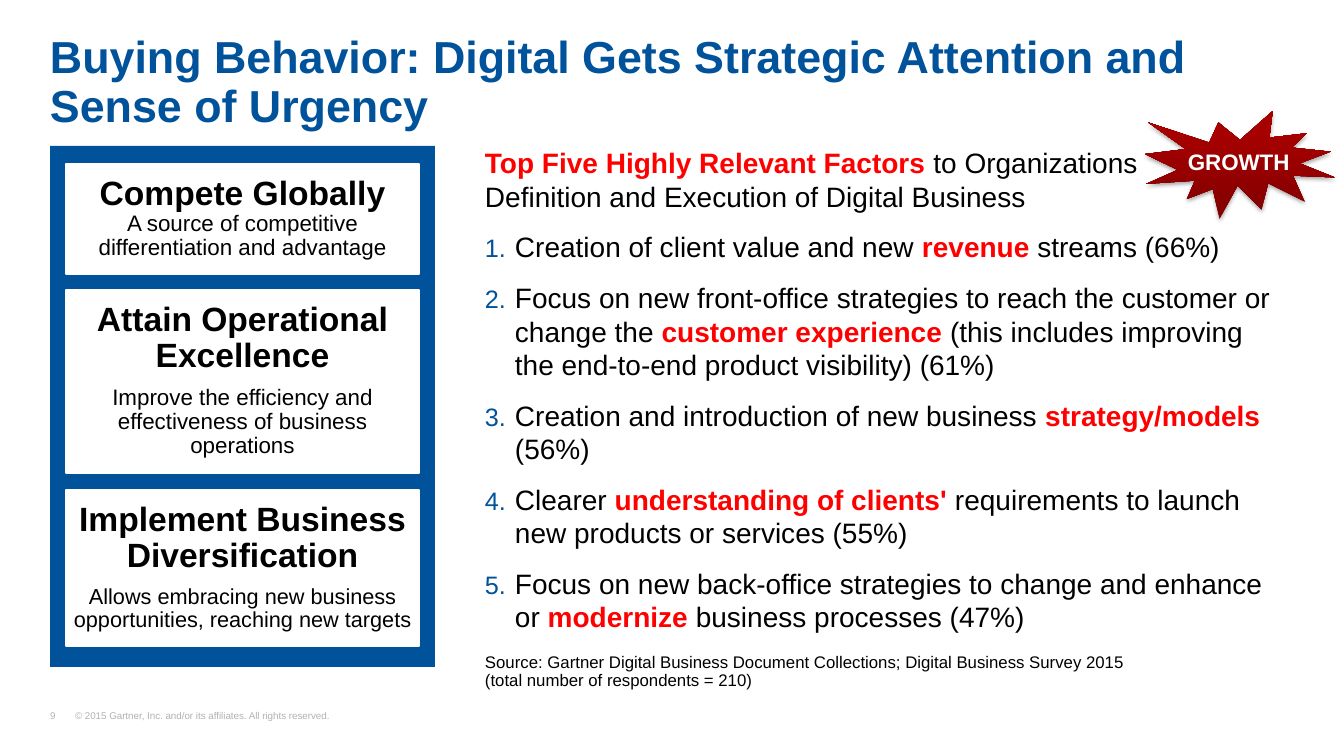
import pptx
import pptx.util
import pptx.dml.color
import pptx.enum.shapes
import pptx.enum.text
import pptx.oxml
import pptx.oxml.ns

BLUE, RED, BLACK, WHITE, GREY = "00529B", "FF0000", "000000", "FFFFFF", "B2B2B2"
DARK_RED, BRIGHT_RED = "800000", "A70000"
FONT = "Arial"

TITLE = "Buying Behavior: Digital Gets Strategic Attention and Sense of Urgency"
GOALS = [
    {"top": 164, "height": 110, "size": 16, "joined": True,
     "name": "Compete Globally",
     "detail": "A source of competitive differentiation and advantage"},
    {"top": 290, "height": 183, "size": 16, "joined": False,
     "name": "Attain Operational Excellence",
     "detail": "Improve the efficiency and effectiveness of business operations"},
    {"top": 490, "height": 156, "size": 15.5, "joined": False,
     "name": "Implement Business Diversification",
     "detail": "Allows embracing new business opportunities, reaching new targets"},
]
INTRO = ("", "Top Five Highly Relevant Factors ",
         "to Organizations \nDefinition and Execution of Digital Business")
FACTORS = [
    ("Creation of client value and new ", "revenue ", "streams (66%)"),
    ("Focus on new front-office strategies to reach the customer or change the ",
     "customer experience",
     " (this includes improving the end-to-end product visibility) (61%)"),
    ("Creation and introduction of new business ", "strategy/models", " (56%)"),
    ("Clearer ", "understanding of clients' ",
     "requirements to launch new products or services (55%)"),
    ("Focus on new back-office strategies to change and enhance or ", "modernize",
     " business processes (47%)"),
]
SOURCE = ("Source: Gartner Digital Business Document Collections; "
          "Digital Business Survey 2015 (total number of respondents = 210)")
FOOTER = "9\t© 2015 Gartner, Inc. and/or its affiliates. All rights reserved."
BURST = "GROWTH"

EMU_PER_PX = 914400 / 100.8
SHAPES = pptx.enum.shapes.MSO_SHAPE
ANCHOR = pptx.enum.text.MSO_ANCHOR
CENTER = pptx.enum.text.PP_ALIGN.CENTER


def px(length):
    return pptx.util.Emu(round(length * EMU_PER_PX))


def rgb(color):
    return pptx.dml.color.RGBColor.from_string(color)


def add_xml(parent, xml):
    namespace = pptx.oxml.ns.nsdecls("a")
    parent.append(pptx.oxml.parse_xml(xml.replace(" ", f" {namespace} ", 1)))


def set_frame(frame, insets=(0, 0, 0, 0), anchor=ANCHOR.TOP, wrap=True):
    frame.word_wrap = wrap
    frame.vertical_anchor = anchor
    (frame.margin_left, frame.margin_top,
     frame.margin_right, frame.margin_bottom) = map(px, insets)
    return frame


def add_text(box, **layout):
    return set_frame(slide.shapes.add_textbox(*map(px, box)).text_frame, **layout)


def add_block(kind, box, fill=None, line=None):
    block = slide.shapes.add_shape(kind, *map(px, box))
    block.shadow.inherit = False
    if fill:
        block.fill.solid()
        block.fill.fore_color.rgb = rgb(fill)
    if line:
        block.line.color.rgb = rgb(line)
        block.line.width = pptx.util.Pt(2)
    else:
        block.line.fill.background()
    return block


def write(paragraph, text, size=20, color=BLACK, bold=False, align=None,
          spacing=None, before=None, after=None):
    if align is not None:
        paragraph.alignment = align
    if spacing is not None:
        paragraph.line_spacing = spacing
    if before is not None:
        paragraph.space_before = pptx.util.Pt(before)
    if after is not None:
        paragraph.space_after = pptx.util.Pt(after)
    for index, piece in enumerate(text.split("\n")):
        if index:
            paragraph.add_line_break()
        if piece:
            run = paragraph.add_run()
            run.text = piece
            run.font.name = FONT
            run.font.size = pptx.util.Pt(size)
            run.font.bold = bold
            run.font.color.rgb = rgb(color)


def write_highlighted(paragraph, parts):
    lead, highlight, rest = parts
    write(paragraph, lead, after=12)
    write(paragraph, highlight, color=RED, bold=True)
    write(paragraph, rest)


deck = pptx.Presentation()
deck.slide_width, deck.slide_height = px(1344), px(756)
slide = deck.slides.add_slide(deck.slide_layouts[6])

footer = add_text((50, 711, 338, 11), anchor=ANCHOR.BOTTOM).paragraphs[0]
footer_properties = footer._p.get_or_add_pPr()
add_xml(footer_properties, f'<a:tabLst ><a:tab pos="{px(25)}" algn="l"/></a:tabLst>')
write(footer, FOOTER, size=7, color=GREY, spacing=0.9)

title = add_text((50, 25, 1243, 60), insets=(0, 10, 0, 0))
write(title.paragraphs[0], TITLE, size=32, color=BLUE, bold=True, spacing=0.9)

add_block(SHAPES.RECTANGLE, (50, 146, 385, 521), fill=BLUE)
for goal in GOALS:
    card = add_block(SHAPES.RECTANGLE, (66, goal["top"], 353, goal["height"]),
                     fill=WHITE, line=WHITE)
    frame = set_frame(card.text_frame, insets=(5, 12, 5, 12))
    name = frame.paragraphs[0]
    write(name, goal["name"], size=24, bold=True, align=CENTER, spacing=0.9)
    if goal["joined"]:
        write(name, "\n" + goal["detail"], size=goal["size"])
    else:
        write(frame.add_paragraph(), goal["detail"], size=goal["size"],
              align=CENTER, spacing=0.9, before=8)

source = add_text((485, 643, 660, 57), insets=(0, 10, 10, 10), anchor=ANCHOR.BOTTOM)
write(source.paragraphs[0], SOURCE, size=12, spacing=0.9)

findings = add_text((485, 146, 808, 487), insets=(0, 0, 5, 0))
write_highlighted(findings.paragraphs[0], INTRO)
for factor in FACTORS:
    item = findings.add_paragraph()
    item_properties = item._p.get_or_add_pPr()
    item_properties.set("marL", str(px(30)))
    item_properties.set("indent", str(-px(30)))
    add_xml(item_properties, f'<a:buClr ><a:srgbClr val="{BLUE}"/></a:buClr>')
    add_xml(item_properties, '<a:buSzPct val="90000"/>')
    add_xml(item_properties, f'<a:buFont typeface="{FONT}"/>')
    add_xml(item_properties, '<a:buAutoNum type="arabicPeriod"/>')
    write_highlighted(item, factor)

burst = add_block(SHAPES.EXPLOSION1, (1145, 111, 190, 108))
burst.fill.gradient()
burst.fill.gradient_angle = 90
for stop, (position, color) in zip(burst.fill.gradient_stops,
                                   [(0, DARK_RED), (0.8, BRIGHT_RED)]):
    stop.position = position
    stop.color.rgb = rgb(color)
effects = burst._element.spPr.find(pptx.oxml.ns.qn("a:effectLst"))
add_xml(effects, f'<a:outerShdw blurRad="{pptx.util.Pt(3.1)}" dist="{pptx.util.Pt(1.8)}" '
                 f'dir="5400000" rotWithShape="0"><a:srgbClr val="{BLACK}">'
                 '<a:alpha val="35000"/></a:srgbClr></a:outerShdw>')
burst_frame = set_frame(burst.text_frame, insets=(10, 5, 10, 5),
                        anchor=ANCHOR.MIDDLE, wrap=False)
write(burst_frame.paragraphs[0], BURST, size=16, color=WHITE, bold=True, align=CENTER)

deck.save("out.pptx")
